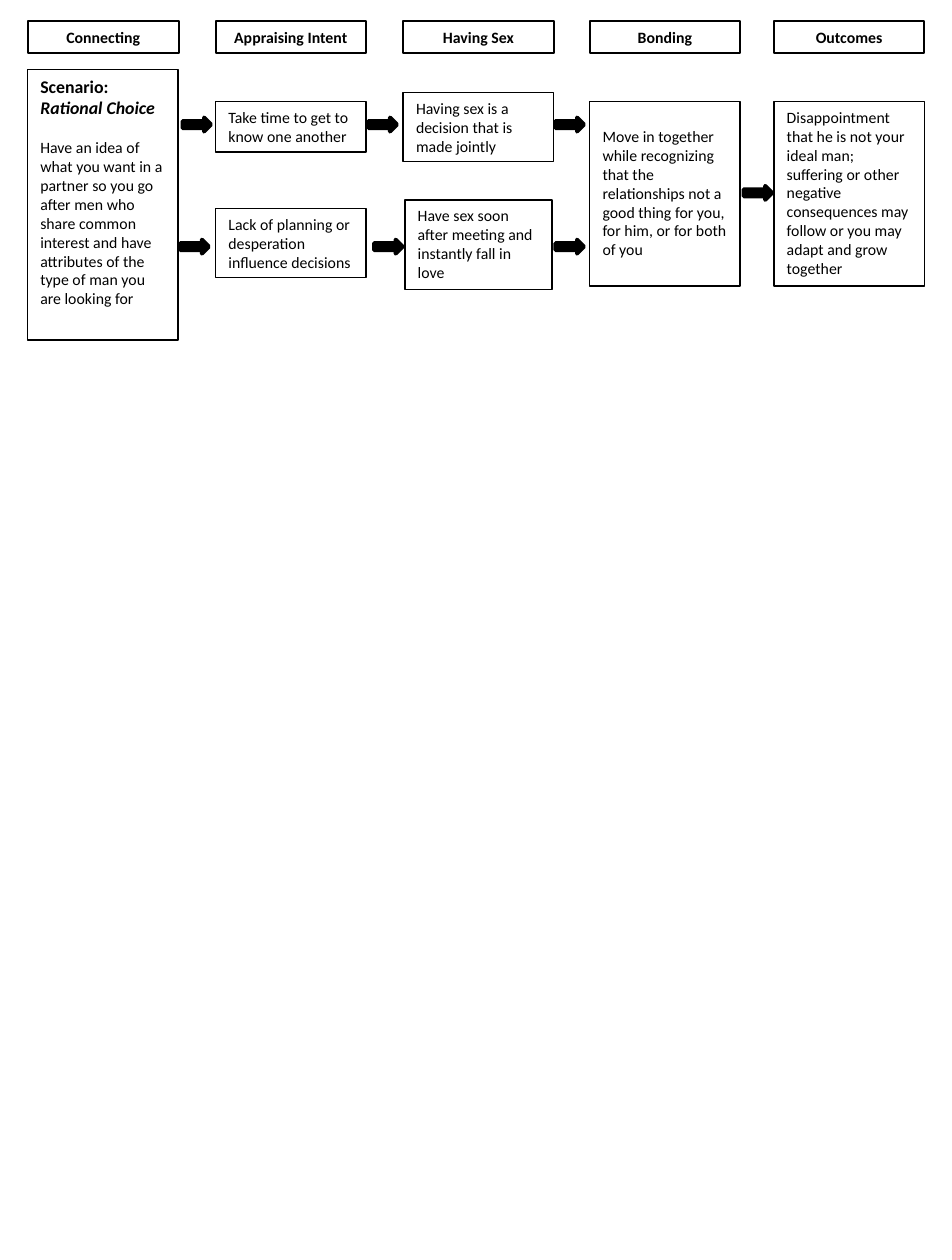
from pptx import Presentation
from pptx.dml.color import RGBColor as Color
from pptx.enum.shapes import MSO_SHAPE as Shape
from pptx.enum.text import MSO_ANCHOR as Anchor, MSO_AUTO_SIZE as AutoSize, PP_ALIGN as Align
from pptx.util import Emu, Pt

PX = 3600
COLORS = {"ink": "000000"}
BODY = {"size": Pt(8)}
HEADING = {"size": Pt(8), "bold": True}
SCENARIO = {"size": Pt(9), "bold": True}
CHOICE = {"size": Pt(9), "bold": True, "italic": True}
BLANK_LINE = 9.8

COLUMNS = [50, 385, 720, 1053, 1382]
COLUMN_WIDTH = 269
STAGES = ["Connecting", "Appraising Intent", "Having Sex", "Bonding", "Outcomes"]
STEPS = [
    (720, 165, 269, 124, 11, "Having sex is a decision that is made jointly"),
    (723, 357, 263, 160, 11, "Have sex soon after meeting and instantly fall in love"),
    (1053, 181, 269, 330, 45,
     "Move in together while recognizing that the relationships not a good thing "
     "for you, for him, or for both of you"),
    (385, 181, 269, 91, 11, "Take time to get to know one another"),
    (385, 372, 269, 124, 11, "Lack of planning or desperation influence decisions"),
    (1382, 181, 269, 330, 11,
     "Disappointment that he is not your ideal man; suffering or other negative "
     "consequences may follow or you may adapt and grow together"),
]
IDEA = ("Have an idea of what you want in a partner so you go after men who share common "
        "interest and have attributes of the type of man you are looking for")
ARROWS = [(326, 210), (322, 428), (658, 210), (668, 428), (992, 210), (992, 428), (1328, 332)]


class Flowchart:
    font = "Calibri"

    def __init__(self, deck):
        self.page = deck.slides.add_slide(deck.slide_layouts[6])

    def shape(self, kind, bounds, weight):
        shape = self.page.shapes.add_shape(kind, *(Emu(value * PX) for value in bounds))
        shape.shadow.inherit = False
        shape.fill.background()
        shape.line.color.rgb = Color.from_string(COLORS["ink"])
        shape.line.width = Pt(weight)
        return shape

    def box(self, bounds, paragraphs, weight=0.75, align=Align.LEFT, top=11):
        frame = self.shape(Shape.RECTANGLE, bounds, weight).text_frame
        layout = {"word_wrap": True, "auto_size": AutoSize.NONE, "vertical_anchor": Anchor.TOP,
                  "margin_left": 23 * PX, "margin_right": 23 * PX,
                  "margin_top": top * PX, "margin_bottom": 11 * PX}
        for name, value in layout.items():
            setattr(frame, name, value)
        for index, (gap, spans) in enumerate(paragraphs):
            para = frame.add_paragraph() if index else frame.paragraphs[0]
            para.alignment = align
            para.space_before = Pt(gap)
            for text, style in spans:
                self.span(para, text, style)

    def span(self, para, text, style):
        span = para.add_run()
        span.text = text
        for name, value in {"name": self.font, **style}.items():
            setattr(span.font, name, value)
        span.font.color.rgb = Color.from_string(COLORS["ink"])

    def arrow(self, left, top):
        arrow = self.shape(Shape.RIGHT_ARROW, (left, top, 51, 25), 2)
        arrow.fill.solid()
        arrow.fill.fore_color.rgb = Color.from_string(COLORS["ink"])


def main():
    deck = Presentation()
    deck.slide_width, deck.slide_height = Emu(1700 * PX), Emu(2250 * PX)
    chart = Flowchart(deck)
    for left, stage in zip(COLUMNS, STAGES):
        chart.box((left, 38, COLUMN_WIDTH, 57), [(0, [(stage, HEADING)])], 1, Align.CENTER)
    for left, top, width, height, inset, text in STEPS:
        chart.box((left, top, width, height), [(0, [(text, BODY)])], top=inset)
    chart.box((49, 124, COLUMN_WIDTH, 483), [
        (0, [("Scenario: ", SCENARIO), ("Rational Choice", CHOICE)]),
        (BLANK_LINE, [(IDEA, BODY)]),
    ])
    for left, top in ARROWS:
        chart.arrow(left, top)
    deck.save("out.pptx")


if __name__ == "__main__":
    main()
